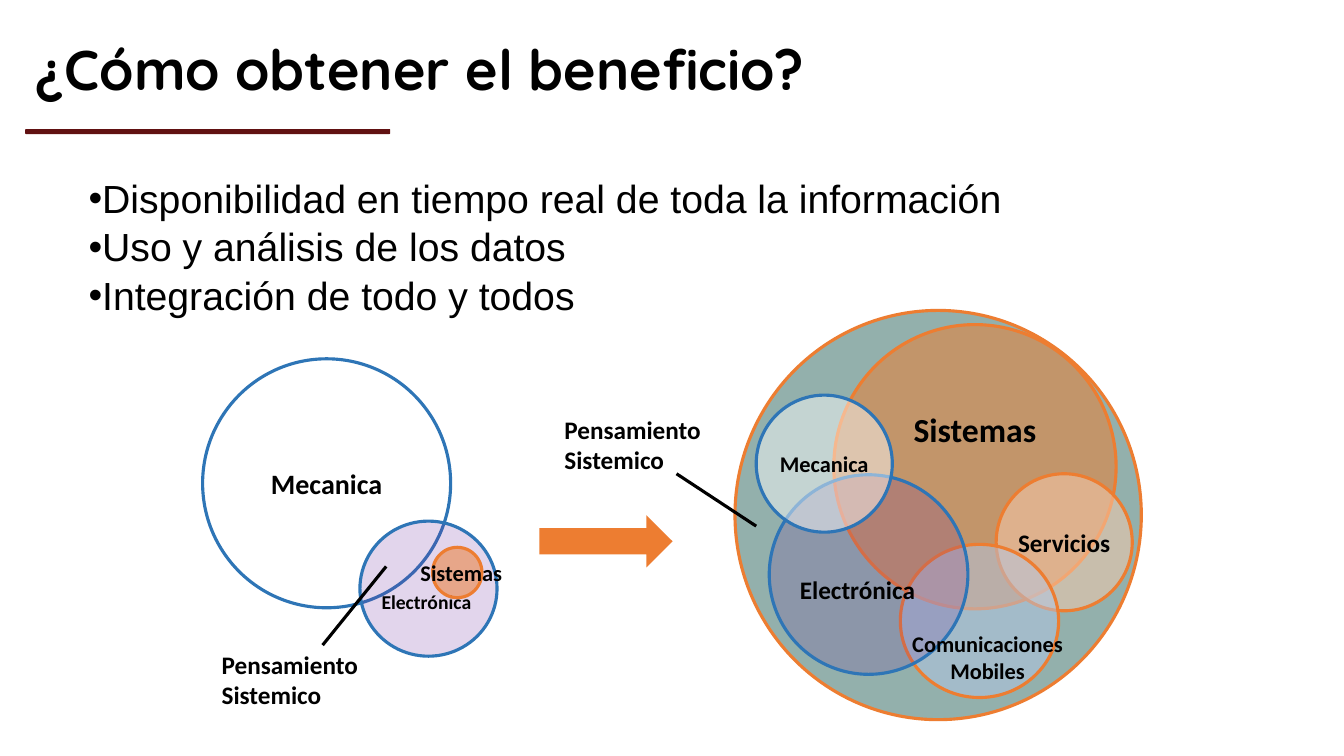
from dataclasses import dataclass

from lxml import etree
from pptx import Presentation
from pptx import util as u
from pptx.dml.color import RGBColor
from pptx.enum import shapes, text
from pptx.oxml import ns


@dataclass(frozen=True)
class Theme:
    title_font: str = "Quicksand"
    body_font: str = "Arial"
    label_font: str = "Calibri"
    ink: str = "000000"
    rule: str = "611112"
    orange: str = "ED7D31"
    blue: str = "2E75B6"
    sage: str = "93B0AC"
    peach: str = "F8CBAD"
    sky: str = "B4C7E7"
    purple: str = "7030A0"
    white: str = "FFFFFF"
    title_size: int = 40
    body_size: int = 28
    huge: int = 24
    large: int = 20
    medium: int = 18
    small: int = 16
    tiny: int = 14
    stroke: float = 2.25


THEME = Theme()


@dataclass(frozen=True)
class Box:
    left: float
    top: float
    width: float
    height: float

    def inner(self, left, top, width, height):
        """Return a box whose corner is measured from this box's corner."""
        return Box(self.left + left, self.top + top, width, height)

    def lengths(self):
        return [u.Inches(n) for n in (self.left, self.top, self.width, self.height)]


def color(code):
    return RGBColor.from_string(code)


def add_span(para, words, size, font=THEME.label_font, bold=True):
    span = para.add_run()
    span.text = words
    span.font.name = font
    span.font.size = u.Pt(size)
    span.font.bold = bold
    span.font.color.rgb = color(THEME.ink)


def add_text(page, box, words, size, align=text.PP_ALIGN.LEFT):
    frame = page.shapes.add_textbox(*box.lengths()).text_frame
    frame.word_wrap = True
    frame.paragraphs[0].alignment = align
    add_span(frame.paragraphs[0], words, size)


def add_filled(page, kind, box, fill, opacity=100):
    shape = page.shapes.add_shape(kind, *box.lengths())
    shape.shadow.inherit = False
    shape.fill.solid()
    shape.fill.fore_color.rgb = color(fill)
    shape.line.fill.background()
    if opacity < 100:
        tint = shape.fill._xPr.find(".//" + ns.qn("a:srgbClr"))
        etree.SubElement(tint, ns.qn("a:alpha"), val=str(opacity * 1000))
    return shape


def add_circle(page, box, fill, opacity, outline, words="", size=0, shift=(0, 0)):
    """Draw a circle whose label sits off its centre by shift (right, down)."""
    circle = add_filled(page, shapes.MSO_SHAPE.OVAL, box, fill, opacity)
    circle.line.color.rgb = color(outline)
    circle.line.width = u.Pt(THEME.stroke)
    if not words:
        return
    frame = circle.text_frame
    frame.word_wrap = False
    frame.vertical_anchor = text.MSO_ANCHOR.MIDDLE
    right, down = shift
    frame.margin_left = u.Inches(max(2 * right, 0))
    frame.margin_right = u.Inches(max(-2 * right, 0))
    frame.margin_top = u.Inches(max(2 * down, 0))
    frame.margin_bottom = u.Inches(max(-2 * down, 0))
    frame.paragraphs[0].alignment = text.PP_ALIGN.CENTER
    add_span(frame.paragraphs[0], words, size)


def add_pointer(page, box, start, end):
    points = [u.Inches(n) for x, y in (start, end) for n in (box.left + x, box.top + y)]
    pointer = page.shapes.add_connector(shapes.MSO_CONNECTOR.STRAIGHT, *points)
    pointer.line.color.rgb = color(THEME.ink)
    pointer.line.width = u.Pt(THEME.stroke)
    etree.SubElement(pointer._element.spPr, ns.qn("a:effectLst"))


def add_heading(page, box):
    add_filled(page, shapes.MSO_SHAPE.ROUNDED_RECTANGLE, box.inner(0, 1.03, 3.62, 0.05), THEME.rule)
    title = page.shapes.add_textbox(*box.inner(0, 0, box.width, 0.94).lengths())
    frame = title.text_frame
    frame.word_wrap = True
    frame.vertical_anchor = text.MSO_ANCHOR.MIDDLE
    para = frame.paragraphs[0]
    para.line_spacing = 0.9
    add_span(para, "¿Cómo obtener el beneficio?", THEME.title_size, THEME.title_font)


def add_benefits(page, box):
    frame = page.shapes.add_textbox(*box.lengths()).text_frame
    frame.word_wrap = True
    benefits = (
        "Disponibilidad en tiempo real de toda la información",
        "Uso y análisis de los datos",
        "Integración de todo y todos",
    )
    for index, benefit in enumerate(benefits):
        para = frame.add_paragraph() if index else frame.paragraphs[0]
        layout = para._p.get_or_add_pPr()
        hang = u.Inches(0.13)
        layout.set("marL", str(hang))
        layout.set("indent", str(-hang))
        etree.SubElement(layout, ns.qn("a:buFont"), typeface=THEME.body_font)
        etree.SubElement(layout, ns.qn("a:buChar"), char="•")
        para.line_spacing = 0.9
        para.space_before = u.Pt(4.5 if index else 0)
        add_span(para, benefit, THEME.body_size, THEME.body_font, bold=False)


def add_future(page, box):
    """Draw the large circle of systems that holds the other disciplines."""
    t = THEME
    add_circle(page, box, t.sage, 100, t.orange)
    add_circle(page, box.inner(0.98, 0.14, 2.8, 2.82), t.orange, 53, t.orange,
               "Sistemas", t.huge, (0, -0.37))
    add_circle(page, box.inner(2.59, 1.62, 1.35, 1.36), t.peach, 53, t.orange,
               "Servicios", t.medium)
    add_circle(page, box.inner(1.64, 2.32, 1.57, 1.52), t.sky, 50, t.orange)
    add_circle(page, box.inner(0.34, 1.63, 1.97, 1.98), t.purple, 20, t.blue,
               "Electrónica", t.medium, (-0.11, 0.15))
    add_text(page, box.inner(-1.79, 0.98, 1.64, 0.71), "Pensamiento Sistemico", t.medium)
    add_pointer(page, box, (-0.58, 1.62), (0.21, 2.14))
    add_circle(page, box.inner(0.21, 0.84, 1.35, 1.36), t.white, 46, t.blue,
               "Mecanica", t.small)
    add_text(page, box.inner(1.55, 3.12, 1.91, 0.64), "Comunicaciones Mobiles",
             t.small, text.PP_ALIGN.CENTER)


def add_present(page, box):
    """Draw the mechanics circle with electronics and systems at its edge."""
    t = THEME
    add_circle(page, box.inner(0, 0, 2.46, 2.47), t.white, 46, t.blue, "Mecanica", t.large)
    add_circle(page, box.inner(1.56, 1.61, 1.36, 1.34), t.purple, 20, t.blue,
               "Electrónica", t.tiny, (-0.02, 0.13))
    add_circle(page, box.inner(2.28, 1.87, 0.49, 0.5), t.orange, 53, t.orange)
    add_text(page, box.inner(0.09, 2.83, 1.67, 0.71), "Pensamiento Sistemico", t.medium)
    add_pointer(page, box, (1.19, 2.84), (1.82, 2.06))
    add_text(page, box.inner(1.61, 1.94, 1.91, 0.37), "Sistemas", t.small, text.PP_ALIGN.CENTER)


def main():
    deck = Presentation()
    deck.slide_width = u.Inches(13.33)
    deck.slide_height = u.Inches(7.5)
    page = deck.slides.add_slide(deck.slide_layouts[6])
    add_heading(page, Box(0.25, 0.25, 10.67, 1.08))
    add_benefits(page, Box(0.78, 1.73, 11.76, 1.5))
    add_future(page, Box(7.29, 3.08, 4.03, 4.06))
    add_filled(page, shapes.MSO_SHAPE.RIGHT_ARROW, Box(5.35, 5.11, 1.32, 0.52), THEME.orange)
    add_present(page, Box(2.01, 3.56, 3.52, 3.54))
    deck.save("out.pptx")


if __name__ == "__main__":
    main()
